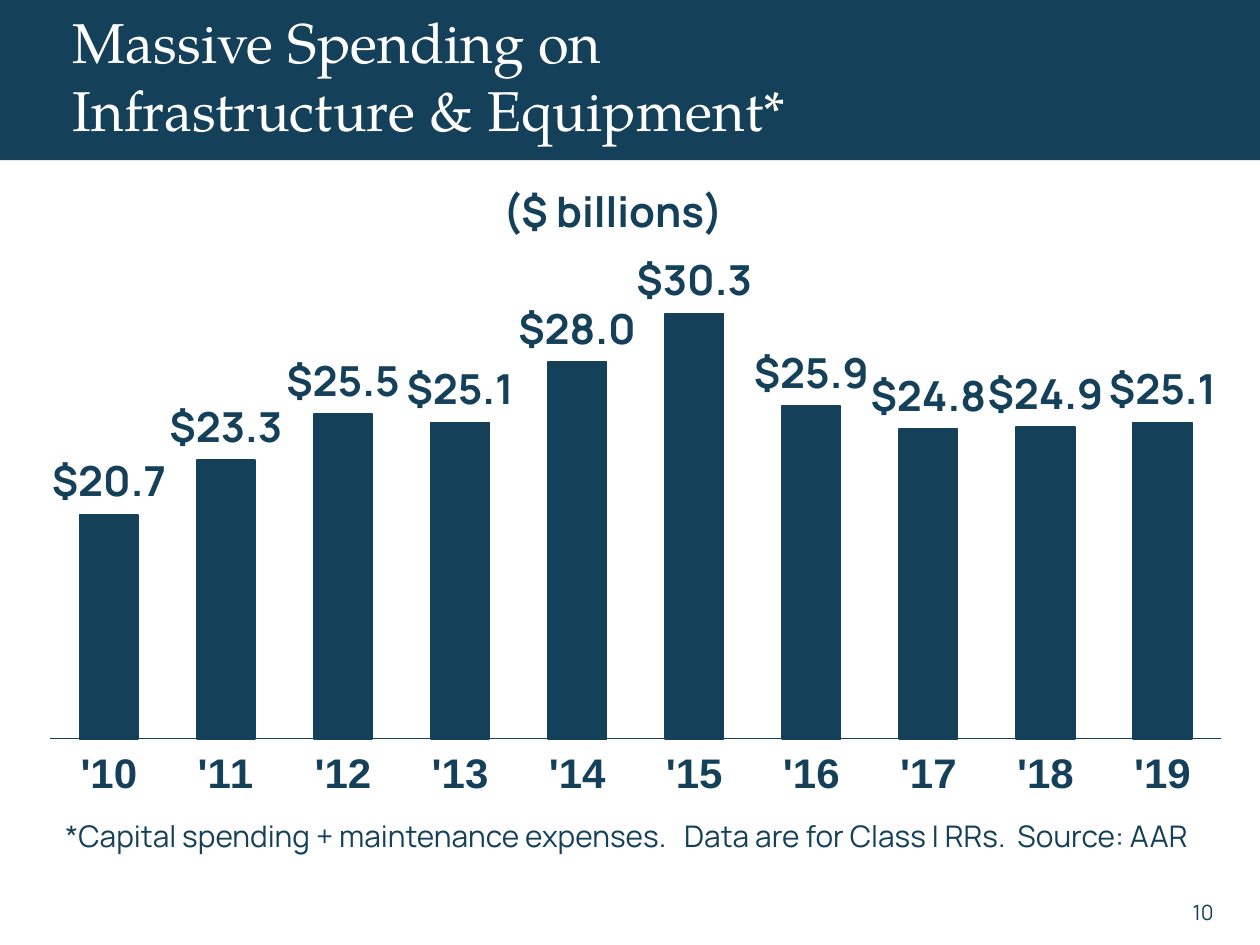
from lxml.etree import SubElement
from pptx import Presentation
from pptx.chart.data import CategoryChartData
from pptx.dml.color import RGBColor
from pptx.enum.chart import XL_CHART_TYPE, XL_LABEL_POSITION, XL_TICK_LABEL_POSITION, XL_TICK_MARK
from pptx.enum.shapes import MSO_SHAPE
from pptx.enum.text import MSO_ANCHOR, PP_ALIGN
from pptx.oxml.ns import qn
from pptx.util import Cm, Pt

COLORS = {"navy": "144059", "white": "FFFFFF"}
SERIF, SANS, AXIS = "TeX Gyre Pagella", "Manrope", "Arial"
SPENDING = {
    "'10": 20.7, "'11": 23.3, "'12": 25.5, "'13": 25.1, "'14": 28.0,
    "'15": 30.3, "'16": 25.9, "'17": 24.8, "'18": 24.9, "'19": 25.1,
}


def rgb(name):
    return RGBColor.from_string(COLORS[name])


def set_font(font, name, size, color="navy", bold=False):
    font.name = name
    font.size = Pt(size)
    font.bold = bold
    font.color.rgb = rgb(color)


def add_text(s, box, text, name, size, color="navy", bold=False,
             align=PP_ALIGN.LEFT, anchor=MSO_ANCHOR.TOP, inset=True):
    sp = s.shapes.add_textbox(*(Cm(v) for v in box))
    tf = sp.text_frame
    tf.word_wrap = True
    tf.vertical_anchor = anchor
    if not inset:
        tf.margin_left = tf.margin_right = tf.margin_top = tf.margin_bottom = 0
    p = tf.paragraphs[0]
    p.alignment = align
    r = p.add_run()
    r.text = text
    set_font(r.font, name, size, color, bold)


def add_header(s, box):
    x, y, w, h = box
    sp = s.shapes.add_shape(MSO_SHAPE.RECTANGLE, *(Cm(v) for v in box))
    sp.shadow.inherit = False
    sp.fill.solid()
    sp.fill.fore_color.rgb = rgb("navy")
    sp.line.fill.background()
    add_text(s, (x + 1.47, y + 0.69, 17.35, 1.65),
             "Massive Spending on Infrastructure & Equipment*", SERIF, 32,
             "white", anchor=MSO_ANCHOR.MIDDLE, inset=False)


def set_plot_layout(chart, x, y, w, h):
    plot_area = chart._chartSpace.chart.plotArea
    layout = plot_area.find(qn("c:layout"))
    if layout is None:
        layout = SubElement(plot_area, qn("c:layout"))
        plot_area.insert(0, layout)
    manual = SubElement(layout, qn("c:manualLayout"))
    values = {"layoutTarget": "inner", "xMode": "edge", "yMode": "edge",
              "x": x, "y": y, "w": w, "h": h}
    for tag, value in values.items():
        SubElement(manual, qn(f"c:{tag}")).set("val", str(value))


def add_spending_chart(s, box):
    data = CategoryChartData()
    data.categories = list(SPENDING)
    data.add_series("Spending", list(SPENDING.values()))
    chart = s.shapes.add_chart(XL_CHART_TYPE.COLUMN_CLUSTERED,
                               *(Cm(v) for v in box), data).chart
    chart.has_legend = False
    chart.has_title = False
    set_font(chart.font, AXIS, 18, bold=True)
    set_plot_layout(chart, 0.02, 0.03, 0.97, 0.83)

    value_axis = chart.value_axis
    value_axis.minimum_scale = 10
    value_axis.maximum_scale = 32
    value_axis.major_unit = 2
    value_axis.has_major_gridlines = False
    value_axis.visible = False

    category_axis = chart.category_axis
    category_axis.major_tick_mark = XL_TICK_MARK.NONE
    category_axis.tick_label_position = XL_TICK_LABEL_POSITION.LOW
    category_axis.format.line.color.rgb = rgb("navy")
    category_axis.format.line.width = Pt(0.25)
    set_font(category_axis.tick_labels.font, AXIS, 24, bold=True)

    plot = chart.plots[0]
    plot.gap_width = 100
    plot.vary_by_categories = False
    series = plot.series[0]
    series.format.fill.solid()
    series.format.fill.fore_color.rgb = rgb("navy")
    series.format.line.color.rgb = rgb("navy")
    series.format.line.width = Pt(1)
    labels = series.data_labels
    labels.show_value = True
    labels.number_format = '"$"#,##0.0'
    labels.number_format_is_linked = False
    labels.position = XL_LABEL_POSITION.OUTSIDE_END
    set_font(labels.font, SANS, 24, bold=True)


def add_body(s, box):
    x, y, w, h = box
    add_text(s, (x + 3.81, y + 0.38, 17.09, 1.27), "($ billions)", SANS, 24,
             bold=True, align=PP_ALIGN.CENTER)
    add_spending_chart(s, (x + 0.53, y + 1.85, w - 1.07, 11.38))


def add_footer(s, box):
    x, y, w, h = box
    add_text(s, (x + 1.07, y, w - 1.07, 0.99),
             "*Capital spending + maintenance expenses.   "
             "Data are for Class I RRs.  Source: AAR", SANS, 17)
    add_text(s, (x + w - 2.11, y + 1.65, 1.93, 0.64), "10", SANS, 12,
             align=PP_ALIGN.CENTER)


def main():
    prs = Presentation()
    prs.slide_width, prs.slide_height = Cm(25.4), Cm(19.05)
    s = prs.slides.add_slide(prs.slide_layouts[6])
    s.background.fill.solid()
    s.background.fill.fore_color.rgb = rgb("white")
    add_header(s, (0, 0, 25.4, 3.23))
    add_body(s, (0, 3.23, 25.4, 13.13))
    add_footer(s, (0, 16.36, 25.4, 2.69))
    prs.save("out.pptx")


if __name__ == "__main__":
    main()
